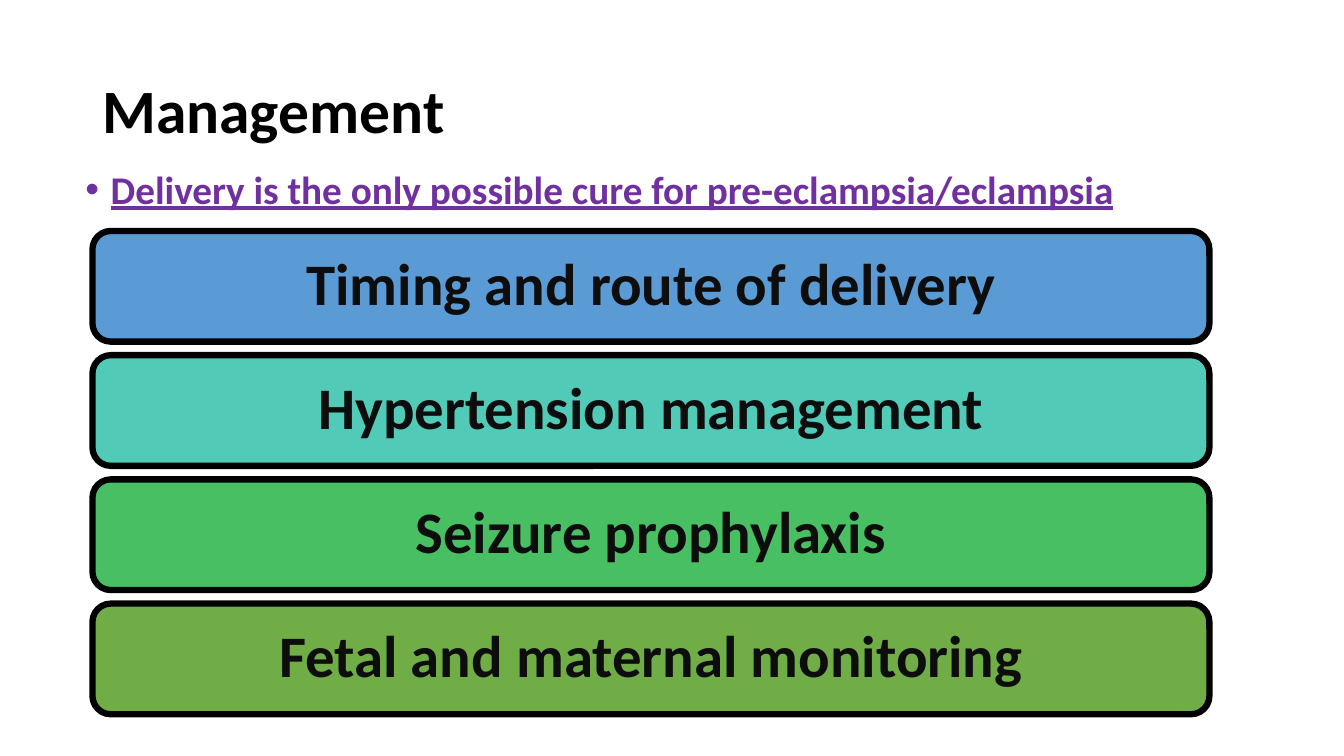
from lxml import etree
from pptx import Presentation
from pptx.dml.color import RGBColor
from pptx.enum import shapes, text
from pptx.oxml.ns import qn
from pptx.util import Cm, Pt

FONT = "Calibri"
STEPS = [
    ("Timing and route of delivery", "5B9BD5"),
    ("Hypertension management", "52CAB8"),
    ("Seizure prophylaxis", "49BF64"),
    ("Fetal and maternal monitoring", "70AD47"),
]


def colour(hex_value):
    return RGBColor.from_string(hex_value)


def add_bullet(paragraph, indent):
    properties = paragraph._p.get_or_add_pPr()
    properties.set("marL", str(indent))
    properties.set("indent", str(-indent))
    etree.SubElement(properties, qn("a:buFont"), typeface="Arial")
    etree.SubElement(properties, qn("a:buChar"), char="•")


def write_text(frame, words, size, ink, align=text.PP_ALIGN.LEFT,
               anchor=text.MSO_ANCHOR.TOP, underline=False, bullet_indent=None):
    frame.word_wrap = True
    frame.vertical_anchor = anchor
    paragraph = frame.paragraphs[0]
    paragraph.alignment = align
    paragraph.line_spacing = 0.9
    if bullet_indent:
        add_bullet(paragraph, bullet_indent)
    run = paragraph.add_run()
    run.text = words
    run.font.name = FONT
    run.font.size = Pt(size)
    run.font.bold = True
    run.font.underline = underline
    run.font.color.rgb = colour(ink)


def add_label(slide, box, words, **style):
    label = slide.shapes.add_textbox(*map(Cm, box))
    write_text(label.text_frame, words, **style)


def add_step(slide, box, words, fill):
    step = slide.shapes.add_shape(shapes.MSO_SHAPE.ROUNDED_RECTANGLE, *map(Cm, box))
    step.shadow.inherit = False
    step.fill.solid()
    step.fill.fore_color.rgb = colour(fill)
    step.line.color.rgb = colour("000000")
    step.line.width = Pt(4.5)
    write_text(step.text_frame, words, size=42, ink="0D0D0D",
               align=text.PP_ALIGN.CENTER, anchor=text.MSO_ANCHOR.MIDDLE)


def main():
    deck = Presentation()
    deck.slide_width, deck.slide_height = Cm(33.87), Cm(19.05)
    slide = deck.slides.add_slide(deck.slide_layouts[6])

    # Heading and key message
    add_label(slide, (2.33, 1.01, 29.21, 3.68), "Management",
              size=44, ink="000000", anchor=text.MSO_ANCHOR.MIDDLE)
    add_label(slide, (1.9, 4.17, 29.64, 2.9),
              "Delivery is the only possible cure for pre-eclampsia/eclampsia",
              size=28, ink="7030A0", underline=True, bullet_indent=Cm(0.64))

    # Stack of management steps
    first_top, pitch = 5.82, 3.13
    for index, (words, fill) in enumerate(STEPS):
        add_step(slide, (2.33, first_top + index * pitch, 28.15, 2.79), words, fill)

    deck.save("out.pptx")


if __name__ == "__main__":
    main()
